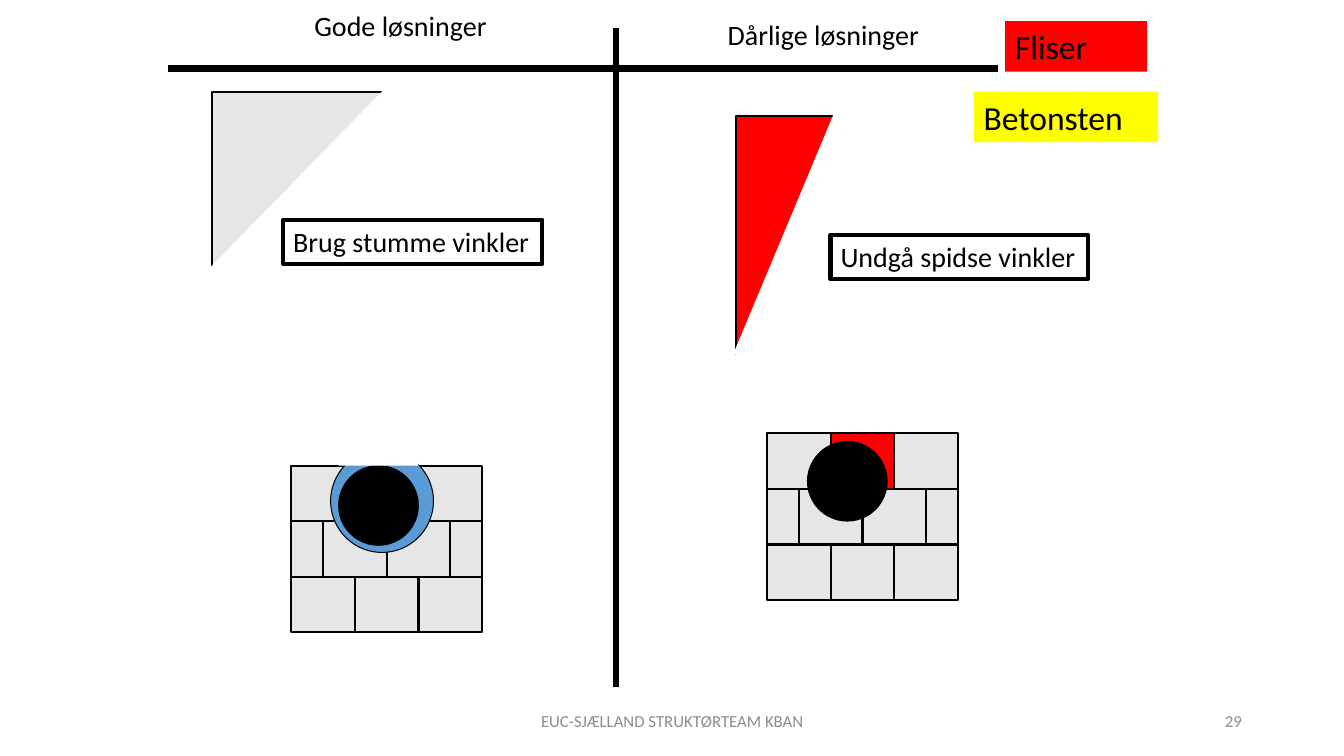
from dataclasses import dataclass
from typing import Optional

from lxml import etree
from pptx import Presentation
from pptx.dml.color import RGBColor
from pptx.enum.shapes import MSO_CONNECTOR, MSO_SHAPE
from pptx.enum.text import MSO_ANCHOR, MSO_AUTO_SIZE, PP_ALIGN
from pptx.oxml.ns import qn
from pptx.util import Inches, Pt

RECTANGLE, OVAL = MSO_SHAPE.RECTANGLE, MSO_SHAPE.OVAL
STRAIGHT = MSO_CONNECTOR.STRAIGHT
TOP, MIDDLE = MSO_ANCHOR.TOP, MSO_ANCHOR.MIDDLE
LEFT, CENTER, RIGHT = PP_ALIGN.LEFT, PP_ALIGN.CENTER, PP_ALIGN.RIGHT
GROW, FIXED = MSO_AUTO_SIZE.SHAPE_TO_FIT_TEXT, MSO_AUTO_SIZE.NONE

BLACK = RGBColor(0x00, 0x00, 0x00)
WHITE = RGBColor(0xFF, 0xFF, 0xFF)
RED = RGBColor(0xFF, 0x00, 0x00)
YELLOW = RGBColor(0xFF, 0xFF, 0x00)
BLUE = RGBColor(0x5B, 0x9B, 0xD5)
STONE_GREY = RGBColor(0xE7, 0xE6, 0xE6)
FOOTER_GREY = RGBColor(0x8C, 0x8C, 0x8C)

FONT = "Calibri"
SLIDE_WIDTH, SLIDE_HEIGHT = Inches(13.333), Inches(7.5)
STONE_WIDTH, STONE_HEIGHT = 4.73, 7.35
STONE_LINE, THIN_LINE, FRAME_LINE, AXIS_LINE = 1.5, 0.75, 3, 4.5
# Widths of the stones in each course, in whole stones
COURSES = ((1, 1, 1), (0.5, 1, 1, 0.5), (1, 1, 1))


@dataclass(frozen=True)
class Box:
    """A frame in percent of the slide's width and height."""
    left: float
    top: float
    width: float
    height: float

    def frame(self) -> tuple[int, int, int, int]:
        return (across(self.left), down(self.top),
                across(self.width), down(self.height))


@dataclass(frozen=True)
class Figure:
    box: Box
    fill: Optional[RGBColor]
    line: Optional[RGBColor] = BLACK
    line_width: float = THIN_LINE
    kind: int = RECTANGLE
    rotation: float = 0


@dataclass(frozen=True)
class Label:
    text: str
    box: Box
    size: int = 20
    color: RGBColor = BLACK
    fill: Optional[RGBColor] = None
    framed: bool = False
    wrap: bool = False
    align: int = LEFT
    anchor: int = TOP
    auto_size: int = GROW


@dataclass(frozen=True)
class Paving:
    left: float
    top: float
    red_stone: Optional[tuple[int, int]] = None


@dataclass(frozen=True)
class Axis:
    start: tuple[float, float]
    end: tuple[float, float]


def across(percent: float) -> int:
    return round(SLIDE_WIDTH * percent / 100)


def down(percent: float) -> int:
    return round(SLIDE_HEIGHT * percent / 100)


# Squares, each cut to a triangle by a turned white rectangle
CORNERS = (
    Figure(Box(15.75, 12.13, 12.98, 23.07), STONE_GREY, line_width=STONE_LINE),
    Figure(Box(15.45, 21.07, 20.7, 18.93), WHITE, WHITE, rotation=314.3),
    Figure(Box(54.75, 15.33, 15.9, 31.47), RED, line_width=STONE_LINE),
    Figure(Box(54, 17.73, 25.13, 27.33), WHITE, WHITE, rotation=292.7),
)
PAVINGS = (Paving(21.68, 61.6), Paving(57.08, 57.33, red_stone=(0, 1)))
# Well covers, with a white strip trimming the blue ring
COVERS = (
    Figure(Box(60.08, 58.4, 5.93, 10.53), BLACK, kind=OVAL),
    Figure(Box(24.6, 59.47, 7.65, 13.6), BLUE, kind=OVAL),
    Figure(Box(25.2, 61.6, 5.93, 10.53), BLACK, kind=OVAL),
    Figure(Box(25.2, 58.4, 5.93, 3.2), WHITE, line=None),
)
AXES = (
    Axis((45.83, 3.73), (45.83, 90.93)),
    Axis((12.53, 9.07), (74.25, 9.07)),
)
LABELS = (
    Label("Gode løsninger", Box(22.65, 0.53, 14.48, 5.87)),
    Label("Dårlige løsninger", Box(53.4, 1.6, 15.9, 5.87)),
    Label("Brug stumme vinkler", Box(21.08, 29.07, 19.28, 5.87), framed=True),
    Label("Undgå spidse vinkler", Box(61.8, 31.07, 19.13, 5.87), framed=True),
    Label("Fliser", Box(74.78, 2.8, 10.58, 6.67), 24, fill=RED, wrap=True),
    Label("Betonsten", Box(72.45, 12.13, 13.73, 6.67), 24, fill=YELLOW, wrap=True),
    Label("EUC-SJÆLLAND STRUKTØRTEAM KBAN", Box(33.15, 92.67, 33.75, 5.33), 12,
          FOOTER_GREY, wrap=True, align=CENTER, anchor=MIDDLE, auto_size=FIXED),
    Label("29", Box(70.65, 92.67, 22.5, 5.33), 12,
          FOOTER_GREY, wrap=True, align=RIGHT, anchor=MIDDLE, auto_size=FIXED),
)


def draw_figure(slide, figure: Figure):
    shape = slide.shapes.add_shape(figure.kind, *figure.box.frame())
    shape.shadow.inherit = False
    shape.rotation = figure.rotation
    if figure.fill is None:
        shape.fill.background()
    else:
        shape.fill.solid()
        shape.fill.fore_color.rgb = figure.fill
    if figure.line is None:
        shape.line.fill.background()
    else:
        shape.line.color.rgb = figure.line
        shape.line.width = Pt(figure.line_width)
    return shape


def draw_paving(slide, paving: Paving) -> None:
    for row, course in enumerate(COURSES):
        left = paving.left
        for column, share in enumerate(course):
            width = share * STONE_WIDTH
            box = Box(left, paving.top + row * STONE_HEIGHT, width, STONE_HEIGHT)
            fill = RED if (row, column) == paving.red_stone else STONE_GREY
            draw_figure(slide, Figure(box, fill, line_width=STONE_LINE))
            left += width


def draw_axis(slide, axis: Axis) -> None:
    (start_x, start_y), (end_x, end_y) = axis.start, axis.end
    connector = slide.shapes.add_connector(
        STRAIGHT, across(start_x), down(start_y), across(end_x), down(end_y))
    connector.line.color.rgb = BLACK
    connector.line.width = Pt(AXIS_LINE)
    properties = connector.element.find(qn("p:spPr"))
    etree.SubElement(properties, qn("a:effectLst"))


def draw_label(slide, label: Label) -> None:
    if label.framed or label.fill is not None:
        line = BLACK if label.framed else None
        shape = draw_figure(slide, Figure(label.box, label.fill, line, FRAME_LINE))
    else:
        shape = slide.shapes.add_textbox(*label.box.frame())
    text_frame = shape.text_frame
    text_frame.word_wrap = label.wrap
    text_frame.auto_size = label.auto_size
    text_frame.vertical_anchor = label.anchor
    paragraph = text_frame.paragraphs[0]
    paragraph.text = label.text
    paragraph.alignment = label.align
    paragraph.font.name = FONT
    paragraph.font.size = Pt(label.size)
    paragraph.font.color.rgb = label.color


def main() -> None:
    presentation = Presentation()
    presentation.slide_width = SLIDE_WIDTH
    presentation.slide_height = SLIDE_HEIGHT
    slide = presentation.slides.add_slide(presentation.slide_layouts[6])
    for corner in CORNERS:
        draw_figure(slide, corner)
    for paving in PAVINGS:
        draw_paving(slide, paving)
    for cover in COVERS:
        draw_figure(slide, cover)
    for axis in AXES:
        draw_axis(slide, axis)
    for label in LABELS:
        draw_label(slide, label)
    presentation.save("out.pptx")


if __name__ == "__main__":
    main()
